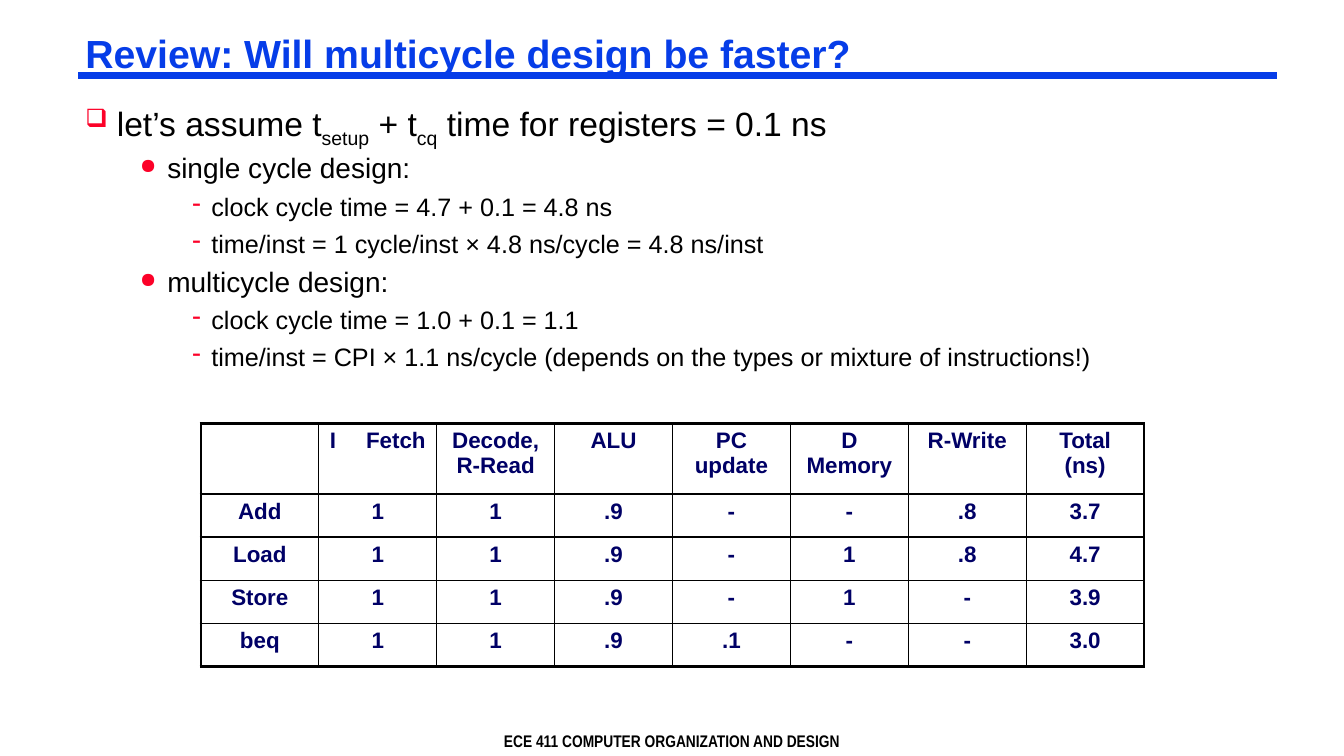
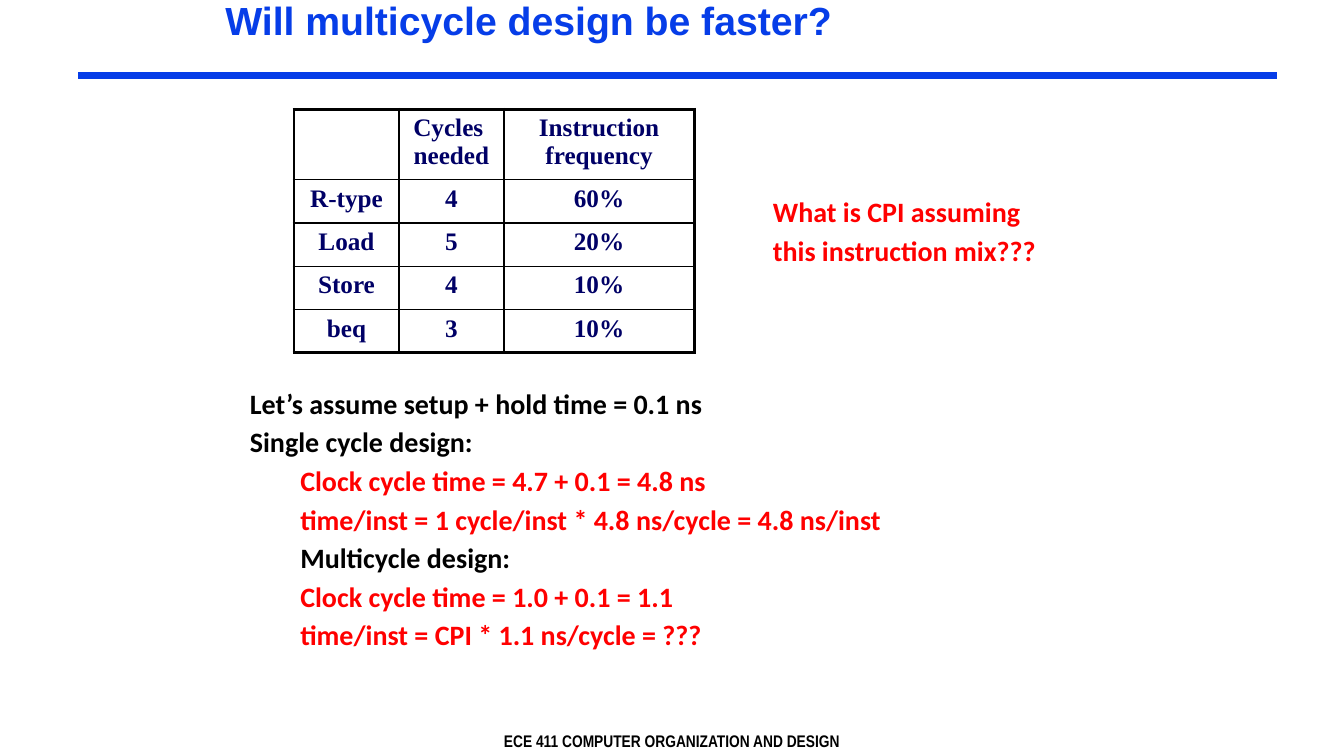
"""Build two slides comparing single-cycle and multicycle processor timing."""
from dataclasses import dataclass

from lxml.etree import SubElement
from pptx import Presentation
from pptx.dml.color import RGBColor
from pptx.enum.shapes import MSO_CONNECTOR
from pptx.enum.text import PP_ALIGN
from pptx.oxml.ns import qn
from pptx.slide import Slide
from pptx.table import _Cell
from pptx.text.text import TextFrame, _Paragraph
from pptx.util import Pt


@dataclass(frozen=True)
class Theme:
    blue: str = "063DE8"
    navy: str = "000066"
    black: str = "000000"
    red: str = "FF0000"
    bullet: str = "FC0128"
    sans: str = "Arial"
    narrow: str = "Arial Narrow"
    note: str = "Calibri"
    serif: str = "Times New Roman"
    title_size: float = 28
    note_size: float = 20
    footer_size: float = 12
    thick: float = 2.25
    thin: float = 1


T = Theme()


@dataclass(frozen=True)
class Style:
    font: str
    size: float
    color: str
    bold: bool = True
    align: PP_ALIGN = PP_ALIGN.LEFT
    line_spacing: float = 1.0
    before: float = 0
    margin: float = 0
    hang: float = 0
    bullet: str = ""
    bullet_pct: int = 100


@dataclass(frozen=True)
class Run:
    text: str
    baseline: int = 0
    spacing: float = 0


@dataclass(frozen=True)
class Para:
    style: Style
    runs: tuple[Run, ...]


@dataclass(frozen=True)
class Box:
    left: float
    top: float
    width: float
    height: float
    inset_x: float = 7.2
    inset_y: float = 3.6
    wrap: bool = True


@dataclass(frozen=True)
class Grid:
    left: float
    top: float
    widths: tuple[float, ...]
    header_height: float
    row_height: float
    style: Style
    rows: tuple[tuple[str | Run | tuple[Run, ...], ...], ...]


TITLE = Style(T.sans, T.title_size, T.blue, line_spacing=0.87)
FOOTER = Style(T.narrow, T.footer_size, T.black, align=PP_ALIGN.CENTER)
TOPIC = Style(T.sans, 24, T.black, False, line_spacing=0.9,
              margin=22.5, hang=22.5, bullet="❑", bullet_pct=75)
POINT = Style(T.sans, 20, T.black, False, line_spacing=0.85, before=8,
              margin=58.5, hang=19.5, bullet="●", bullet_pct=75)
DETAIL = Style(T.sans, 18, T.black, False, line_spacing=0.85, before=8,
               margin=90, hang=13.5, bullet="-")
NOTE = Style(T.note, T.note_size, T.black, before=3.6)
NOTE_IN = Style(T.note, T.note_size, T.black, before=3.6, margin=36)
ANSWER = Style(T.note, T.note_size, T.red, before=3.6, margin=36)
QUESTION = Style(T.note, T.note_size, T.red, before=3.6)
STAGE_CELL = Style(T.sans, 16, T.navy, align=PP_ALIGN.CENTER)
MIX_CELL = Style(T.serif, 18, T.navy, align=PP_ALIGN.CENTER)


def para(style: Style, *parts: str | Run) -> Para:
    return Para(style, tuple(Run(x) if isinstance(x, str) else x for x in parts))


def add_bullet(p: _Paragraph, style: Style) -> None:
    pPr = p._p.get_or_add_pPr()
    pPr.set("marL", str(Pt(style.margin)))
    pPr.set("indent", str(-Pt(style.hang)))
    if style.bullet:
        clr = SubElement(pPr, qn("a:buClr"))
        SubElement(clr, qn("a:srgbClr"), val=T.bullet)
        SubElement(pPr, qn("a:buSzPct"), val=str(style.bullet_pct * 1000))
        SubElement(pPr, qn("a:buChar"), char=style.bullet)


def add_run(p: _Paragraph, run: Run, style: Style) -> None:
    r = p.add_run()
    r.text = run.text
    r.font.name = style.font
    r.font.size = Pt(style.size)
    r.font.bold = style.bold
    r.font.color.rgb = RGBColor.from_string(style.color)
    rPr = r._r.get_or_add_rPr()
    if run.baseline:
        rPr.set("baseline", str(run.baseline * 1000))
    if run.spacing:
        rPr.set("spc", str(round(run.spacing * 100)))


def fill_text(tf: TextFrame, paras: list[Para]) -> None:
    for i, item in enumerate(paras):
        p = tf.add_paragraph() if i else tf.paragraphs[0]
        style = item.style
        p.alignment = style.align
        p.line_spacing = style.line_spacing
        p.space_before = Pt(style.before if i else 0)
        add_bullet(p, style)
        for run in item.runs:
            add_run(p, run, style)


def add_text(s: Slide, box: Box, paras: list[Para]) -> None:
    sp = s.shapes.add_textbox(Pt(box.left), Pt(box.top), Pt(box.width), Pt(box.height))
    tf = sp.text_frame
    tf.word_wrap = box.wrap
    tf.margin_left = tf.margin_right = Pt(box.inset_x)
    tf.margin_top = tf.margin_bottom = Pt(box.inset_y)
    fill_text(tf, paras)


def set_borders(cell: _Cell, widths: dict[str, float]) -> None:
    tcPr = cell._tc.get_or_add_tcPr()
    for side, width in widths.items():
        ln = SubElement(tcPr, qn(f"a:ln{side}"), w=str(Pt(width)))
        fill = SubElement(ln, qn("a:solidFill"))
        SubElement(fill, qn("a:srgbClr"), val=T.black)


def add_grid(s: Slide, grid: Grid) -> None:
    n_rows, n_cols = len(grid.rows), len(grid.widths)
    heights = [grid.header_height] + [grid.row_height] * (n_rows - 1)
    frame = s.shapes.add_table(n_rows, n_cols, Pt(grid.left), Pt(grid.top),
                               Pt(sum(grid.widths)), Pt(sum(heights)))
    table = frame.table
    table.first_row = table.horz_banding = False
    for col, width in zip(table.columns, grid.widths):
        col.width = Pt(width)
    for row, height in zip(table.rows, heights):
        row.height = Pt(height)
    for i, values in enumerate(grid.rows):
        for j, value in enumerate(values):
            cell = table.cell(i, j)
            edges = {"L": j == 0, "R": j == n_cols - 1, "T": i == 0, "B": i == n_rows - 1}
            set_borders(cell, {k: T.thick if v else T.thin for k, v in edges.items()})
            cell.fill.background()
            if isinstance(value, tuple):
                fill_text(cell.text_frame, [para(grid.style, *value)])
            elif value:
                fill_text(cell.text_frame, [para(grid.style, x) for x in value.split("\n")])


def add_slide(prs: Presentation, title: str, title_box: Box) -> Slide:
    s = prs.slides.add_slide(prs.slide_layouts[6])
    rule = s.shapes.add_connector(MSO_CONNECTOR.STRAIGHT, Pt(56), Pt(54), Pt(912), Pt(54))
    rule.line.color.rgb = RGBColor.from_string(T.blue)
    rule.line.width = Pt(4.5)
    SubElement(rule._element.spPr, qn("a:effectLst"))
    add_text(s, Box(0, 518.4, 960, 21.6),
             [para(FOOTER, "ECE 411 COMPUTER ORGANIZATION AND DESIGN")])
    add_text(s, title_box, [para(TITLE, title)])
    return s


def build_review(prs: Presentation) -> None:
    s = add_slide(prs, "Review: Will multicycle design be faster?",
                  Box(56, 23.8, 856, 33, 5, 2))
    add_text(s, Box(56, 72, 856, 245, 5, 2), [
        para(TOPIC, "let’s assume t", Run("setup", -25), " + t", Run("cq", -25),
             " time for registers = 0.1 ns"),
        para(POINT, "single cycle design:"),
        para(DETAIL, "clock cycle time = 4.7 + 0.1 = 4.8 ns"),
        para(DETAIL, "time/inst = 1 cycle/inst × 4.8 ns/cycle = 4.8 ns/inst"),
        para(POINT, "multicycle design:"),
        para(DETAIL, "clock cycle time = 1.0 + 0.1 = 1.1"),
        para(DETAIL, "time/inst = CPI × 1.1 ns/cycle "
                     "(depends on the types or mixture of instructions!)"),
    ])
    fetch = (Run("I"), Run(" ", spacing=17), Run("Fetch"))
    add_grid(s, Grid(143.5, 302.4, (84.24,) * 8, 50.4, 30.8, STAGE_CELL, (
        ("", fetch, "Decode,\nR-Read", "ALU", "PC update", "D Memory", "R-Write", "Total (ns)"),
        ("Add", "1", "1", ".9", "-", "-", ".8", "3.7"),
        ("Load", "1", "1", ".9", "-", "1", ".8", "4.7"),
        ("Store", "1", "1", ".9", "-", "1", "-", "3.9"),
        ("beq", "1", "1", ".9", ".1", "-", "-", "3.0"),
    )))


def build_question(prs: Presentation) -> None:
    s = add_slide(prs, "Will multicycle design be faster?", Box(156, 0, 648, 34, 5, 2))
    add_grid(s, Grid(210, 78, (75, 75, 136), 50.4, 30.9, MIX_CELL, (
        ("", "Cycles \nneeded", "Instruction\nfrequency"),
        ("R-type", "4", "60%"),
        ("Load", "5", "20%"),
        ("Store", "4", "10%"),
        ("beq", "3", "10%"),
    )))
    add_text(s, Box(171.4, 272.2, 650, 206), [
        para(NOTE, "Let’s assume setup + hold time = 0.1 ns"),
        para(NOTE, "Single cycle design:"),
        para(ANSWER, "Clock cycle time = 4.7 + 0.1 = 4.8 ns"),
        para(ANSWER, "time/inst = 1 cycle/inst * 4.8 ns/cycle = 4.8 ns/inst"),
        para(NOTE_IN, "Multicycle design:"),
        para(ANSWER, "Clock cycle time = 1.0 + 0.1 = 1.1"),
        para(ANSWER, "time/inst = CPI * 1.1 ns/cycle = ???"),
    ])
    add_text(s, Box(545, 135.4, 204, 60.5, wrap=False), [
        para(QUESTION, "What is CPI assuming"),
        para(QUESTION, "this instruction mix???"),
    ])


def main() -> None:
    prs = Presentation()
    prs.slide_width, prs.slide_height = Pt(960), Pt(540)
    build_review(prs)
    build_question(prs)
    prs.save("out.pptx")


if __name__ == "__main__":
    main()
